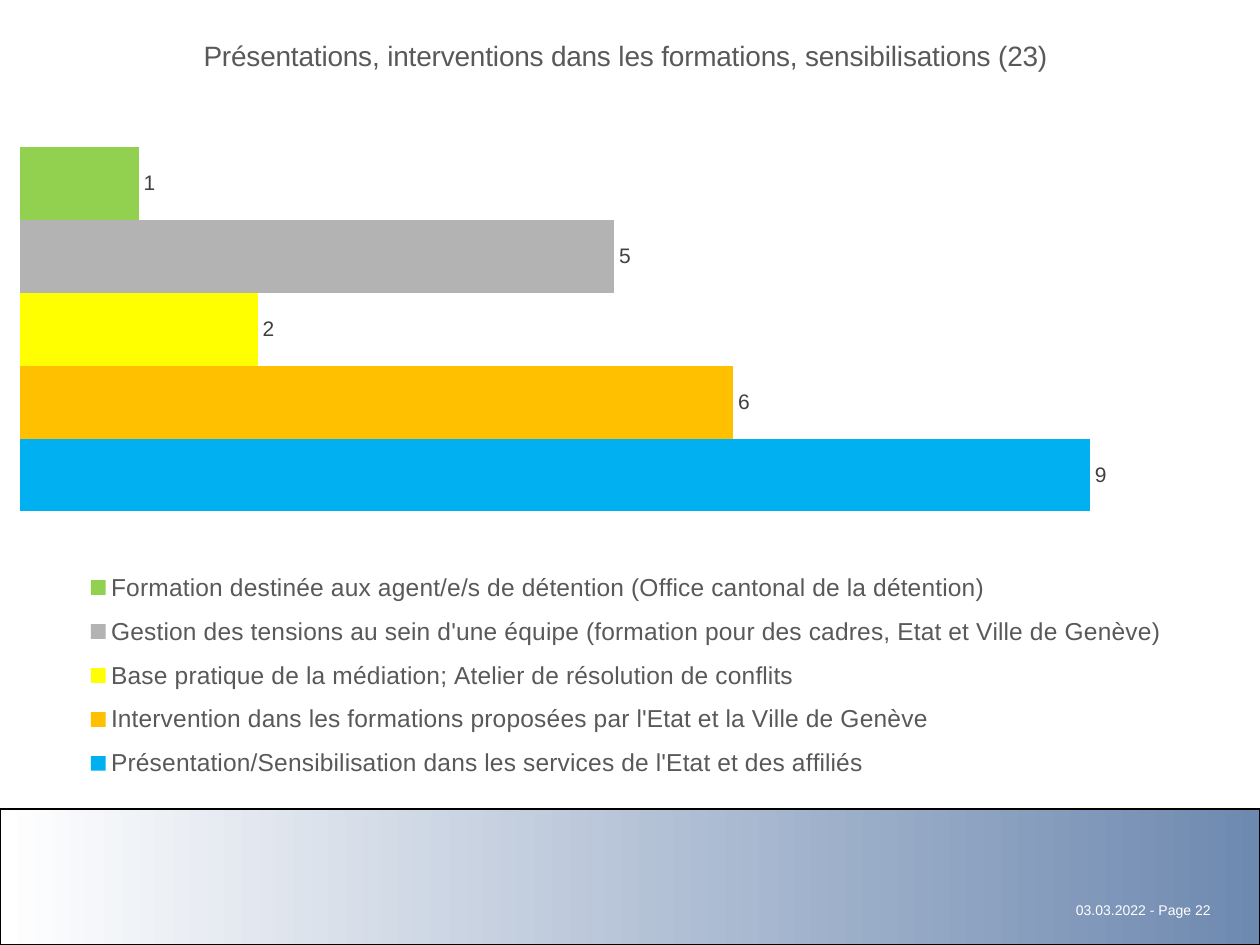
import pptx
import pptx.chart.data
import pptx.dml.color
import pptx.enum.chart
import pptx.enum.shapes
import pptx.enum.text
import pptx.util
from lxml import etree

# Content
TITLE = "Présentations, interventions dans les formations, sensibilisations (23)"
FOOT = "03.03.2022 - Page 22"
BARS = [
    ("Présentation/Sensibilisation dans les services de l'Etat et des affiliés", 9, "blue"),
    ("Intervention dans les formations proposées par l'Etat et la Ville de Genève", 6, "amber"),
    ("Base pratique de la médiation; Atelier de résolution de conflits", 2, "yellow"),
    ("Gestion des tensions au sein d'une équipe (formation pour des cadres, Etat et Ville de Genève)", 5, "gray"),
    ("Formation destinée aux agent/e/s de détention (Office cantonal de la détention)", 1, "green"),
]
HUES = {
    "blue": "00B0F0", "amber": "FFC000", "yellow": "FFFF00", "gray": "B3B3B3",
    "green": "92D050", "white": "FFFFFF", "black": "000000", "steel": "6E89B0",
    "text": "595959", "label": "404040",
}
FACE = "Arial"
WIDE, HIGH = 10, 7.5

# Shares of the slide: left, top, width, height
BAND = (0, 0.856, 1, 0.144)
DATE = (0.834, 0.947, 0.137, 0.03)
CHART = (0, 0, 0.985, 1)

# Shares of the chart
PLOT = {"layoutTarget": "inner", "xMode": "edge", "yMode": "edge",
        "x": 0.016, "y": 0.071, "w": 0.958, "h": 0.555}
KEY = {"xMode": "edge", "yMode": "edge", "x": 0.07, "y": 0.59, "w": 0.87, "h": 0.25}
HEAD = {"xMode": "edge", "yMode": "edge", "x": 0.16, "y": 0.035}


def hue(name):
    return pptx.dml.color.RGBColor.from_string(HUES[name])


def place(box):
    return [pptx.util.Inches(part * size) for part, size in zip(box, (WIDE, HIGH) * 2)]


def style(font, size, name):
    font.name = FACE
    font.size = pptx.util.Pt(size)
    font.bold = False
    font.color.rgb = hue(name)


def set_layout(node, prior, parts):
    """Put a manual layout in a chart part, after its child named prior."""
    ns = etree.QName(node).namespace
    for old in node.findall(f"{{{ns}}}layout"):
        node.remove(old)
    outer = etree.Element(f"{{{ns}}}layout")
    inner = etree.SubElement(outer, f"{{{ns}}}manualLayout")
    for key, val in parts.items():
        etree.SubElement(inner, f"{{{ns}}}{key}").set("val", str(val))
    before = node.find(f"{{{ns}}}{prior}") if prior else None
    node.insert(0 if before is None else node.index(before) + 1, outer)


def add_band(slide):
    band = slide.shapes.add_shape(pptx.enum.shapes.MSO_SHAPE.RECTANGLE, *place(BAND))
    band.shadow.inherit = False
    band.fill.gradient()
    band.fill.gradient_angle = 0
    for stop, (spot, name) in zip(band.fill.gradient_stops, ((0, "white"), (1, "steel"))):
        stop.position = spot
        stop.color.rgb = hue(name)
    band.line.color.rgb = hue("black")
    band.line.width = pptx.util.Pt(1)


def add_date(slide):
    frame = slide.shapes.add_textbox(*place(DATE)).text_frame
    frame.word_wrap = True
    frame.auto_size = pptx.enum.text.MSO_AUTO_SIZE.SHAPE_TO_FIT_TEXT
    frame.text = FOOT
    line = frame.paragraphs[0]
    line.alignment = pptx.enum.text.PP_ALIGN.RIGHT
    style(line.runs[0].font, 8, "white")


def add_bars(slide):
    data = pptx.chart.data.CategoryChartData()
    data.categories = ["1"]
    for name, count, _ in BARS:
        data.add_series(name, [count])
    kind = pptx.enum.chart.XL_CHART_TYPE.BAR_CLUSTERED
    chart = slide.shapes.add_chart(kind, *place(CHART), data).chart
    style(chart.font, 10, "black")

    # Title
    chart.has_title = True
    head = chart.chart_title
    head.text_frame.text = TITLE
    style(head.text_frame.paragraphs[0].runs[0].font, 16, "text")
    head.include_in_layout = False
    set_layout(head._element, "tx", HEAD)

    # Axes and plot
    chart.value_axis.minimum_scale = 0
    chart.value_axis.maximum_scale = 10
    chart.value_axis.has_major_gridlines = False
    chart.value_axis.visible = False
    chart.category_axis.visible = False
    plot = chart.plots[0]
    plot.gap_width = 219
    plot.overlap = 0
    plot.vary_by_categories = False
    set_layout(plot._element.getparent(), None, PLOT)

    # Bars and values
    for bar, (_, _, name) in zip(plot.series, BARS):
        bar.format.fill.solid()
        bar.format.fill.fore_color.rgb = hue(name)
        tags = bar.data_labels
        tags.show_value = True
        tags.position = pptx.enum.chart.XL_LABEL_POSITION.OUTSIDE_END
        style(tags.font, 12, "label")

    # Legend
    chart.has_legend = True
    key = chart.legend
    key.position = pptx.enum.chart.XL_LEGEND_POSITION.BOTTOM
    key.include_in_layout = False
    style(key.font, 14, "text")
    set_layout(key._element, "legendPos", KEY)


def main():
    deck = pptx.Presentation()
    deck.slide_width = pptx.util.Inches(WIDE)
    deck.slide_height = pptx.util.Inches(HIGH)
    slide = deck.slides.add_slide(deck.slide_layouts[6])
    add_band(slide)
    add_date(slide)
    add_bars(slide)
    deck.save("out.pptx")


if __name__ == "__main__":
    main()
